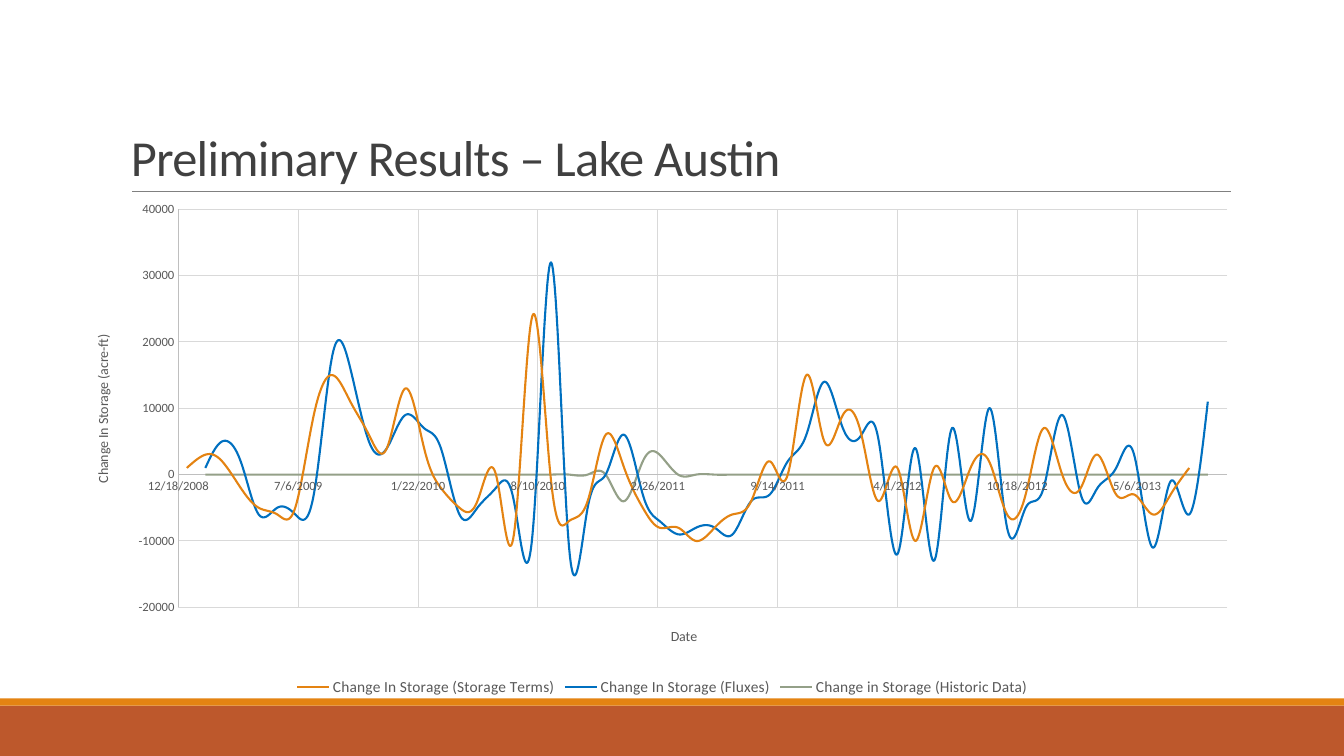
"""Build the Lake Austin preliminary results slide with its storage chart."""
from itertools import accumulate

from lxml.etree import SubElement
from pptx import Presentation
from pptx.chart.data import XyChartData
from pptx.dml.color import RGBColor
from pptx.enum.chart import XL_CHART_TYPE, XL_LEGEND_POSITION, XL_TICK_MARK
from pptx.enum.shapes import MSO_CONNECTOR, MSO_SHAPE
from pptx.enum.text import MSO_ANCHOR
from pptx.oxml import parse_xml
from pptx.oxml.ns import nsdecls, qn
from pptx.util import Inches, Pt

TITLE = "Preliminary Results – Lake Austin"
FIRST_DATE = 39814
YEAR = [31, 28, 31, 30, 31, 30, 31, 31, 30, 31, 30, 31]
LEAP_YEAR = [31, 29] + YEAR[2:]
STORAGE_TERMS = [
    1000, 3000, 2000, -2000, -5000, -6000, -5000, 9000, 15000, 11000, 6000, 4000,
    13000, 4000, -2000, -5000, -4000, 0, -9000, 24000, -1000, -7000, -4000, 6000,
    1000, -5000, -8000, -8000, -10000, -8000, -6000, -4000, 2000, 0, 15000, 5000,
    9000, 6000, -4000, 1000, -10000, 1000, -4000, 1000, 2000, -6000, -3000, 7000,
    0, -2000, 3000, -3000, -3000, -6000, -3000, 1000, None]
FLUXES = [
    None, 1000, 5000, 2000, -6000, -5000, -6000, -3000, 18000, 16000, 5000, 4000,
    9000, 7000, 4000, -6000, -5000, -2000, -4000, -9000, 32000, -11000, -5000, 0,
    6000, -3000, -7000, -9000, -8000, -8000, -9000, -4000, -3000, 2000, 6000, 14000,
    7000, 6000, 5000, -12000, 4000, -13000, 7000, -7000, 10000, -8000, -5000, -2000,
    9000, -3000, -2000, 1000, 3000, -11000, -1000, -6000, 11000]
HISTORIC = [None] + [0] * 23 + [-4000, 2000, 3000] + [0] * 30
SERIES = [
    ("Change In Storage (Storage Terms)", STORAGE_TERMS, "E48312"),
    ("Change In Storage (Fluxes)", FLUXES, "0070C0"),
    ("Change in Storage (Historic Data)", HISTORIC, "94A088"),
]
AXES = {
    "category_axis": dict(title="Date", low=39800, high=41550, unit=200,
                          number_format="m/d/yyyy", title_at=(0.505, 0.85), rotation=0),
    "value_axis": dict(title="Change In Storage (acre-ft)", low=-20000, high=40000,
                       unit=10000, number_format="0", title_at=(0.015, 0.276),
                       rotation=-5400000),
}
BANDS = [(7, 0.5, "BD582C"), (6.93, 0.07, "E48312")]
PLOT_AREA = (0.089, 0.035, 0.8905, 0.782)
THEME = dict(font="Calibri", title="404040", text="595959", rule="808080",
             axis="BFBFBF", grid="D9D9D9", title_size=36, legend_size=11,
             axis_title_size=10, tick_size=9)


def color(name):
    return RGBColor.from_string(THEME.get(name, name))


def style_font(font, size, color_name):
    font.name, font.size, font.bold = THEME["font"], Pt(THEME[size]), False
    font.color.rgb = color(color_name)


def style_line(line, color_name, width):
    line.color.rgb = color(color_name)
    line.width = Pt(width)


def write_text(text_frame, text, *, size, color_name, line_spacing=None, spacing=None):
    paragraph = text_frame.paragraphs[0]
    paragraph.line_spacing = line_spacing
    run = paragraph.add_run()
    run.text = text
    style_font(run.font, size, color_name)
    if spacing is not None:
        run.font._element.set("spc", str(spacing))


def place_chart_part(element, index, fractions, inner=False):
    for layout in element.findall(qn("c:layout")):
        element.remove(layout)
    layout = parse_xml(f"<c:layout {nsdecls('c')}><c:manualLayout/></c:layout>")
    settings = [("layoutTarget", "inner")] if inner else []
    settings += [("xMode", "edge"), ("yMode", "edge")]
    settings += zip("xywh", fractions)
    for tag, value in settings:
        SubElement(layout[0], qn(f"c:{tag}")).set("val", str(value))
    element.insert(index, layout)


def format_axis(axis, details):
    axis.minimum_scale, axis.maximum_scale = details["low"], details["high"]
    axis.major_unit = details["unit"]
    axis.major_tick_mark = axis.minor_tick_mark = XL_TICK_MARK.NONE
    axis.has_major_gridlines = True
    style_line(axis.major_gridlines.format.line, "grid", 0.75)
    style_line(axis.format.line, "axis", 0.75)
    style_font(axis.tick_labels.font, "tick_size", "text")
    axis.tick_labels.number_format = details["number_format"]
    axis.tick_labels.number_format_is_linked = False
    title = axis.axis_title
    write_text(title.text_frame, details["title"], size="axis_title_size", color_name="text")
    body = title.text_frame._txBody.find(qn("a:bodyPr"))
    body.set("rot", str(details["rotation"]))
    body.set("vert", "horz")
    place_chart_part(title._element, 1, details["title_at"])


def format_series(series, line_color):
    element = series._element
    element.get_or_add_smooth().val = True
    style_line(series.format.line, line_color, 1.5)
    for point in list(element.iter(qn("c:pt"))):
        if point.findtext(qn("c:v")) in ("None", "", None):
            point.getparent().remove(point)


def add_storage_chart(slide):
    months = (YEAR * 3 + LEAP_YEAR + YEAR)[:56]
    dates = list(accumulate(months, initial=FIRST_DATE))
    data = XyChartData()
    for name, values, _ in SERIES:
        series = data.add_series(name)
        for date, value in zip(dates, values):
            series.add_data_point(date, value)
    chart = slide.shapes.add_chart(
        XL_CHART_TYPE.XY_SCATTER_SMOOTH_NO_MARKERS, Inches(0.73), Inches(1.9),
        Inches(11.68), Inches(5.05), data).chart
    style_font(chart.font, "axis_title_size", "text")
    chart.has_title = False
    chart.plots[0].vary_by_categories = False
    for series, (_, _, line_color) in zip(chart.plots[0].series, SERIES):
        format_series(series, line_color)
    for axis_name, details in AXES.items():
        format_axis(getattr(chart, axis_name), details)
    chart.has_legend = True
    chart.legend.position = XL_LEGEND_POSITION.BOTTOM
    chart.legend.include_in_layout = False
    style_font(chart.legend.font, "legend_size", "text")
    plot_area = chart._chartSpace.find(".//" + qn("c:plotArea"))
    place_chart_part(plot_area, 0, PLOT_AREA, inner=True)


def add_frame(slide, slide_width):
    for top, height, fill in BANDS:
        band = slide.shapes.add_shape(
            MSO_SHAPE.RECTANGLE, 0, Inches(top), slide_width, Inches(height))
        band.shadow.inherit = False
        band.fill.solid()
        band.fill.fore_color.rgb = color(fill)
        band.line.fill.background()
    rule = slide.shapes.add_connector(
        MSO_CONNECTOR.STRAIGHT, Inches(1.31), Inches(1.9), Inches(12.21), Inches(1.9))
    style_line(rule.line, "rule", 0.5)
    SubElement(rule._element.spPr, qn("a:effectLst"))


def add_title(slide):
    frame = slide.shapes.add_textbox(
        Inches(1.2), Inches(0.31), Inches(11), Inches(1.59)).text_frame
    frame.word_wrap = True
    frame.vertical_anchor = MSO_ANCHOR.BOTTOM
    write_text(frame, TITLE, size="title_size", color_name="title",
               line_spacing=0.85, spacing=-50)


def main():
    presentation = Presentation()
    presentation.slide_width, presentation.slide_height = Inches(13.33), Inches(7.5)
    slide = presentation.slides.add_slide(presentation.slide_layouts[6])
    add_frame(slide, presentation.slide_width)
    add_title(slide)
    add_storage_chart(slide)
    presentation.save("out.pptx")


if __name__ == "__main__":
    main()
